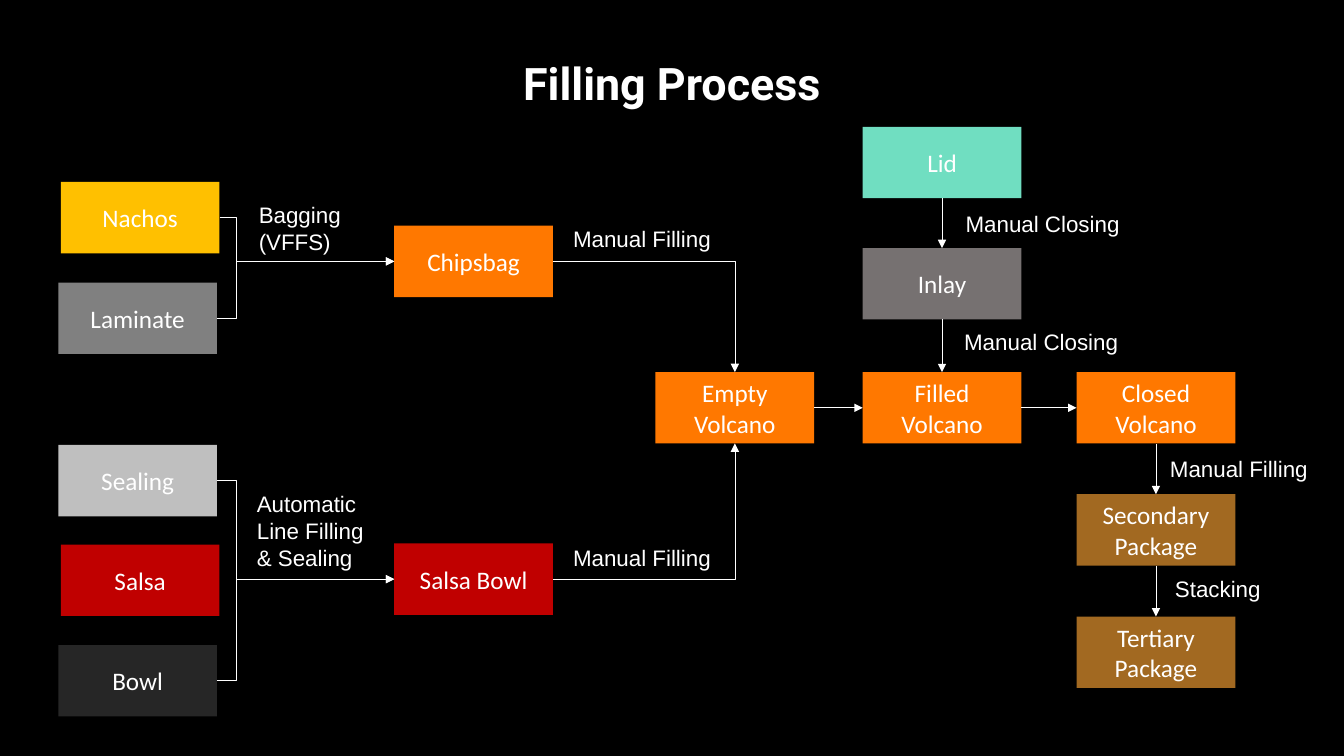
"""Build the Filling Process flow chart slide."""
from lxml import etree
from pptx import Presentation
from pptx import util as u
from pptx.dml import color
from pptx.enum import shapes, text
from pptx.oxml import ns


class Theme:
    black, white = "000000", "FFFFFF"
    orange, red, brown, mint = "FF7800", "C00000", "A26921", "70DEC1"
    yellow, gray, stone = "FFC000", "808080", "767171"
    silver, coal = "BFBFBF", "262626"
    title = ("Roboto", 32)
    box = ("Calibri", 18)
    label = ("Arial", 16)


def paint(fill, shade):
    fill.solid()
    fill.fore_color.rgb = color.RGBColor.from_string(shade)


def write(frame, words, style, align):
    frame.text = words
    frame.word_wrap = True
    for para in frame.paragraphs:
        para.alignment = align
        para.font.name, para.font.size = style[0], u.Pt(style[1])
        paint(para.font.fill, Theme.white)


deck = Presentation()
deck.slide_width, deck.slide_height = u.Pt(960), u.Pt(540)
slide = deck.slides.add_slide(deck.slide_layouts[5])
paint(slide.background.fill, Theme.black)

title = slide.shapes.title
title.left, title.top, title.width, title.height = map(u.Pt, (0, 28, 960, 66.2))
write(title.text_frame, "Filling Process", Theme.title, text.PP_ALIGN.CENTER)
title.text_frame.vertical_anchor = text.MSO_ANCHOR.MIDDLE
title.text_frame.paragraphs[0].font.bold = True
title.text_frame.paragraphs[0].line_spacing = 0.9

wide, high = 113.4, 51
start, inset, fill_col, empty_col, main_col, pack_col = 41.6, 43.4, 281.6, 468.2, 616.2, 769
main_row = 265.8
boxes = {}
for words, left, top, shade in [
    ("Nachos", inset, 130, Theme.yellow),
    ("Laminate", start, 201.8, Theme.gray),
    ("Sealing", start, 317.8, Theme.silver),
    ("Salsa", inset, 389, Theme.red),
    ("Bowl", start, 460.8, Theme.coal),
    ("Chipsbag", fill_col, 161.2, Theme.orange),
    ("Salsa Bowl", fill_col, 388.2, Theme.red),
    ("Empty\nVolcano", empty_col, main_row, Theme.orange),
    ("Lid", main_col, 90.6, Theme.mint),
    ("Inlay", main_col, 177.2, Theme.stone),
    ("Filled\nVolcano", main_col, main_row, Theme.orange),
    ("Closed Volcano", pack_col, main_row, Theme.orange),
    ("Secondary Package", pack_col, 353, Theme.brown),
    ("Tertiary\nPackage", pack_col, 440.4, Theme.brown),
]:
    box = slide.shapes.add_shape(
        shapes.MSO_SHAPE.RECTANGLE, *map(u.Pt, (left, top, wide, high)))
    box.shadow.inherit = False
    paint(box.fill, shade)
    box.line.fill.background()
    write(box.text_frame, words, Theme.box, text.PP_ALIGN.CENTER)
    box.text_frame.vertical_anchor = text.MSO_ANCHOR.MIDDLE
    boxes[words.split("\n")[0]] = box

for words, left, top, width, height in [
    ("Bagging\n(VFFS)", 177.8, 140.4, 96.5, 46),
    ("Automatic\nLine Filling & Sealing", 176.4, 346.6, 96.5, 65.4),
    ("Manual Filling", 402.2, 157, 150.5, 26.7),
    ("Manual Filling", 402.2, 385, 150.5, 26.7),
    ("Manual Filling", 828.6, 321.4, 122.4, 26.7),
    ("Manual Closing", 682.6, 146.8, 150.5, 26.7),
    ("Manual Closing", 681.6, 231, 150.5, 26.7),
    ("Stacking", 832.2, 407.2, 106.6, 26.7),
]:
    label = slide.shapes.add_textbox(*map(u.Pt, (left, top, width, height)))
    write(label.text_frame, words, Theme.label, text.PP_ALIGN.LEFT)
    label.text_frame.auto_size = text.MSO_AUTO_SIZE.SHAPE_TO_FIT_TEXT

upper, left_side, lower, right_side = range(4)
bus = u.Pt(168.6)
for source, leave, target, enter in [
    ("Nachos", right_side, "Chipsbag", left_side),
    ("Laminate", right_side, "Chipsbag", left_side),
    ("Sealing", right_side, "Salsa Bowl", left_side),
    ("Bowl", right_side, "Salsa Bowl", left_side),
    ("Chipsbag", right_side, "Empty", upper),
    ("Salsa Bowl", right_side, "Empty", lower),
    ("Empty", right_side, "Filled", left_side),
    ("Filled", right_side, "Closed Volcano", left_side),
    ("Lid", lower, "Inlay", upper),
    ("Inlay", lower, "Filled", upper),
    ("Closed Volcano", lower, "Secondary Package", upper),
    ("Secondary Package", lower, "Tertiary", upper),
]:
    joined = target in ("Chipsbag", "Salsa Bowl")
    bent = joined or target == "Empty"
    kind = shapes.MSO_CONNECTOR.ELBOW if bent else shapes.MSO_CONNECTOR.STRAIGHT
    arrow = slide.shapes.add_connector(kind, 0, 0, 0, 0)
    arrow.begin_connect(boxes[source], leave)
    arrow.end_connect(boxes[target], enter)
    arrow.line.width = u.Pt(0.5)
    paint(arrow.line.fill, Theme.white)
    props = arrow._element.spPr
    etree.SubElement(props.find(ns.qn("a:ln")), ns.qn("a:tailEnd"), type="triangle")
    etree.SubElement(props, ns.qn("a:effectLst"))
    shape = props.find(ns.qn("a:prstGeom"))
    if joined:
        turn = round((bus - arrow.begin_x) / (arrow.end_x - arrow.begin_x) * 100000)
        guides = shape.find(ns.qn("a:avLst"))
        etree.SubElement(guides, ns.qn("a:gd"), name="adj1", fmla=f"val {turn}")
    elif bent:
        shape.set("prst", "bentConnector2")

deck.save("out.pptx")
